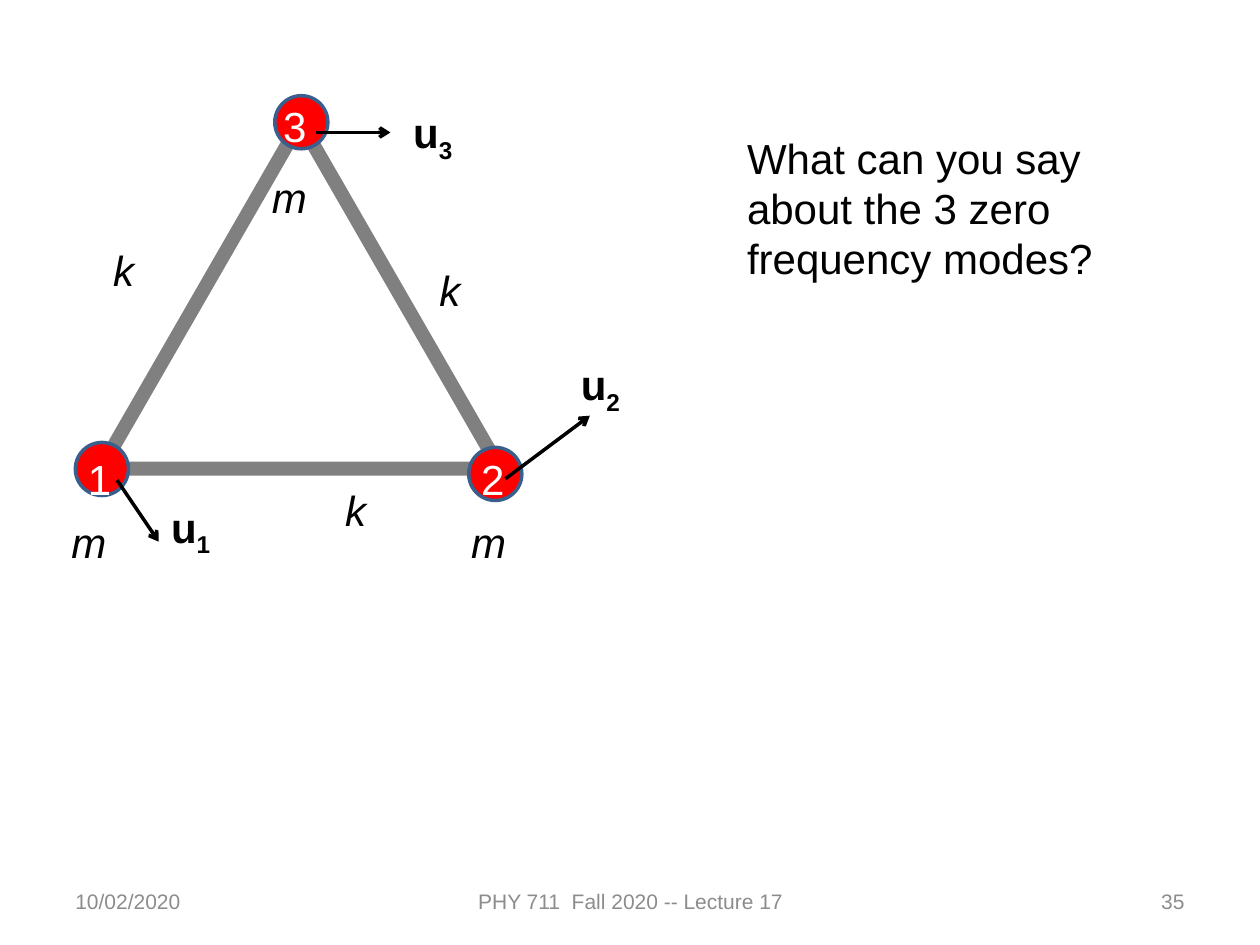
from lxml.etree import SubElement
from pptx import Presentation
from pptx.dml.color import RGBColor
from pptx.enum.shapes import MSO_CONNECTOR, MSO_SHAPE
from pptx.enum.text import MSO_ANCHOR, MSO_AUTO_SIZE, PP_ALIGN
from pptx.oxml.ns import qn
from pptx.util import Cm, Pt

BLACK = RGBColor(0x00, 0x00, 0x00)
WHITE = RGBColor(0xFF, 0xFF, 0xFF)
RED = RGBColor(0xFF, 0x00, 0x00)
BLUE = RGBColor(0x3A, 0x5F, 0x8C)
SPRING_GRAY = RGBColor(0x80, 0x80, 0x80)
FOOTER_GRAY = RGBColor(0x8C, 0x8C, 0x8C)

# Content: all positions and sizes in centimetres
FOOTERS = [
    ("10/02/2020", 1.27, 5.92, PP_ALIGN.LEFT),
    ("PHY 711  Fall 2020 -- Lecture 17", 8.69, 8.05, PP_ALIGN.CENTER),
    ("35", 18.21, 5.92, PP_ALIGN.RIGHT),
]
FOOTER_TOP, FOOTER_HEIGHT = 17.65, 1.02
QUESTION = "What can you say about the 3 zero frequency modes?"
QUESTION_AREA = (14.81, 2.54, 9.32, 3.33)

SPRINGS = (2.03, 2.46, 8.05, 6.99)
MASS_SIZE, LABEL_HEIGHT = 1.07, 1.27
# Each mass: number, circle, number box, arrow start, arrow end, u label, m label
MASSES = [
    ("1", (1.52, 8.92), (1.52, 9.02), (2.36, 9.68), (3.2, 10.92),
     (3.2, 9.98), (1.19, 10.29)),
    ("3", (5.54, 1.93), (5.46, 1.91), (6.38, 2.67), (7.87, 2.67),
     (8.08, 2.03), (5.23, 3.33)),
    ("2", (9.45, 9.02), (9.45, 9.02), (10.19, 9.65), (11.89, 8.38),
     (11.46, 7.11), (9.25, 10.29)),
]
SPRING_LABELS = [(2.03, 4.8), (8.61, 5.21), (6.71, 9.65)]


def add_span(para, text, size, color, bold=False, italic=False):
    span = para.add_run()
    span.text = text
    font = span.font
    font.name, font.size = "Arial", Pt(size)
    font.bold, font.italic = bold, italic
    font.color.rgb = color
    return span


def add_text(shapes, text, area, size=24, color=BLACK, bold=False, italic=False):
    box = shapes.add_textbox(*map(Cm, area))
    box.text_frame.word_wrap = True
    box.text_frame.auto_size = MSO_AUTO_SIZE.SHAPE_TO_FIT_TEXT
    add_span(box.text_frame.paragraphs[0], text, size, color, bold, italic)
    return box


def add_outline(shapes, kind, area, color, width, fill=None):
    shape = shapes.add_shape(kind, *map(Cm, area))
    shape.shadow.inherit = False
    if fill is None:
        shape.fill.background()
    else:
        shape.fill.solid()
        shape.fill.fore_color.rgb = fill
    shape.line.color.rgb = color
    shape.line.width = Pt(width)


def add_arrow(shapes, start, end):
    arrow = shapes.add_connector(MSO_CONNECTOR.STRAIGHT, *map(Cm, start + end))
    arrow.line.color.rgb = BLACK
    arrow.line.width = Pt(2)
    SubElement(arrow.line._get_or_add_ln(), qn("a:tailEnd"), type="arrow")
    SubElement(arrow._element.spPr, qn("a:effectLst"))


def add_displacement(shapes, number, place):
    box = add_text(shapes, "u", place + (1.9, LABEL_HEIGHT), bold=True)
    span = add_span(box.text_frame.paragraphs[0], number, 24, BLACK, bold=True)
    span.font._element.set("baseline", "-25000")


def main():
    deck = Presentation()
    deck.slide_width, deck.slide_height = Cm(25.4), Cm(19.05)
    page = deck.slides.add_slide(deck.slide_layouts[6])

    # Footer
    for text, left, width, align in FOOTERS:
        area = (left, FOOTER_TOP, width, FOOTER_HEIGHT)
        box = add_text(page.shapes, text, area, 12, FOOTER_GRAY)
        box.text_frame.auto_size = MSO_AUTO_SIZE.NONE
        box.text_frame.vertical_anchor = MSO_ANCHOR.MIDDLE
        box.text_frame.paragraphs[0].alignment = align

    # Triangle of springs and masses
    molecule = page.shapes.add_group_shape().shapes
    add_outline(molecule, MSO_SHAPE.ISOSCELES_TRIANGLE, SPRINGS, SPRING_GRAY, 8)
    for number, circle, number_place, start, end, u_place, m_place in MASSES:
        add_outline(molecule, MSO_SHAPE.OVAL, circle + (MASS_SIZE, MASS_SIZE),
                    BLUE, 2, RED)
        add_text(molecule, number, number_place + (MASS_SIZE, LABEL_HEIGHT),
                 color=WHITE)
        add_arrow(molecule, start, end)
        add_displacement(molecule, number, u_place)
        add_text(molecule, "m", m_place + (1.8, LABEL_HEIGHT), italic=True)
    for place in SPRING_LABELS:
        add_text(molecule, "k", place + (1.8, LABEL_HEIGHT), italic=True)

    # Question
    add_text(page.shapes, QUESTION, QUESTION_AREA)

    deck.save("out.pptx")


if __name__ == "__main__":
    main()
